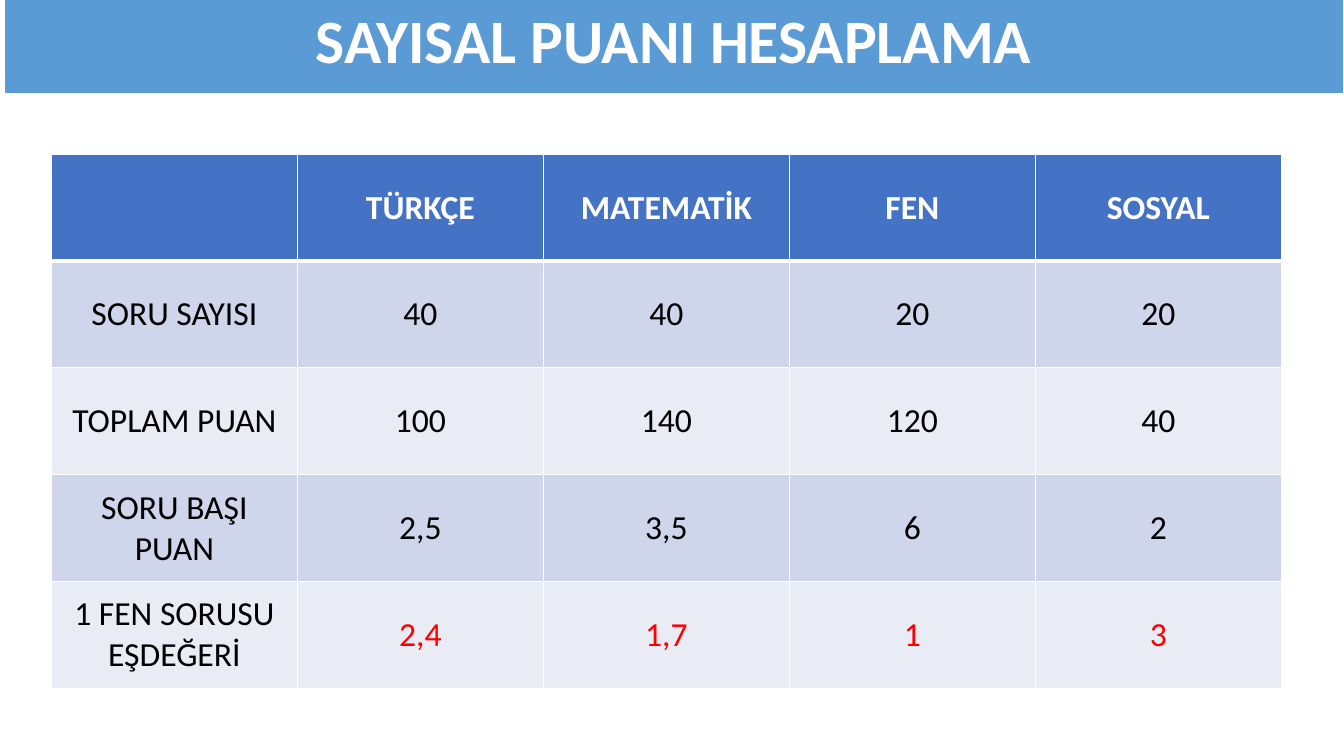
from pptx import Presentation
from pptx.dml.color import RGBColor
from pptx.enum.shapes import MSO_SHAPE as Shape
from pptx.enum.text import MSO_ANCHOR as Anchor, PP_ALIGN as Align
from pptx.oxml import parse_xml
from pptx.oxml.ns import nsdecls
from pptx.util import Inches, Pt

WHITE = RGBColor(0xFF, 0xFF, 0xFF)
BLACK = RGBColor(0x00, 0x00, 0x00)
RED = RGBColor(0xFF, 0x00, 0x00)
SKY = RGBColor(0x5B, 0x9B, 0xD5)
BLUE = RGBColor(0x44, 0x72, 0xC4)
BANDS = RGBColor(0xCF, 0xD5, 0xEA), RGBColor(0xE9, 0xEB, 0xF5)

SCORES = [
    ["", "TÜRKÇE", "MATEMATİK", "FEN", "SOSYAL"],
    ["SORU SAYISI", "40", "40", "20", "20"],
    ["TOPLAM PUAN", "100", "140", "120", "40"],
    ["SORU BAŞI PUAN", "2,5", "3,5", "6", "2"],
    ["1 FEN SORUSU EŞDEĞERİ", "2,4", "1,7", "1", "3"],
]


def write(frame, text, size=24, color=BLACK, bold=False, spacing=1.0, font="Calibri"):
    """Write one centred paragraph into a text frame."""
    frame.word_wrap = True
    para = frame.paragraphs[0]
    para.alignment = Align.CENTER
    para.line_spacing = spacing
    span = para.add_run()
    span.text = text
    span.font.name = font
    span.font.size = Pt(size)
    span.font.bold = bold
    span.font.color.rgb = color


class ScoreSlide:
    """Hold the table style and the current slide."""

    def __init__(self, page, column_width=2.44, row_height=1.06):
        self.page = page
        self.column_width = Inches(column_width)
        self.row_height = Inches(row_height)

    def banner(self, text, left, top, width, height):
        """Add the title bar."""
        box = self.page.shapes.add_shape(
            Shape.RECTANGLE, Inches(left), Inches(top), Inches(width), Inches(height))
        box.shadow.inherit = False
        box.fill.solid()
        box.fill.fore_color.rgb = SKY
        box.line.color.rgb = WHITE
        box.line.width = Pt(1.5)
        box.text_frame.vertical_anchor = Anchor.MIDDLE
        write(box.text_frame, text, size=44, color=WHITE, bold=True, spacing=0.9)

    def borders(self, cell, **widths):
        """Draw white cell borders with the given widths in points."""
        properties = cell._tc.get_or_add_tcPr()
        for side in "LRTB":
            width = Pt(widths.get(side, 1))
            properties.append(parse_xml(
                f'<a:ln{side} {nsdecls("a")} w="{width}"><a:solidFill>'
                f'<a:srgbClr val="{WHITE}"/></a:solidFill></a:ln{side}>'))

    def table(self, rows, left, top):
        """Add the score table with a header, bands and a red result row."""
        count, columns = len(rows), len(rows[0])
        grid = self.page.shapes.add_table(
            count, columns, Inches(left), Inches(top),
            self.column_width * columns, self.row_height * count).table
        for r, row in enumerate(rows):
            header, result = r == 0, r == count - 1
            edges = {0: {"B": 3}, 1: {"T": 3}}.get(r, {})
            for c, text in enumerate(row):
                cell = grid.cell(r, c)
                self.borders(cell, **edges)
                cell.fill.solid()
                cell.fill.fore_color.rgb = BLUE if header else BANDS[(r - 1) % 2]
                cell.vertical_anchor = Anchor.MIDDLE
                color = WHITE if header else RED if result and c else BLACK
                if text:
                    write(cell.text_frame, text, color=color, bold=header)


def main():
    """Build and save the deck."""
    deck = Presentation()
    deck.slide_width, deck.slide_height = Inches(13.33), Inches(7.5)
    slide = ScoreSlide(deck.slides.add_slide(deck.slide_layouts[6]))
    slide.table(SCORES, 0.51, 1.53)
    slide.banner("SAYISAL PUANI HESAPLAMA", 0.04, -0.06, 13.29, 0.99)
    deck.save("out.pptx")


if __name__ == "__main__":
    main()
